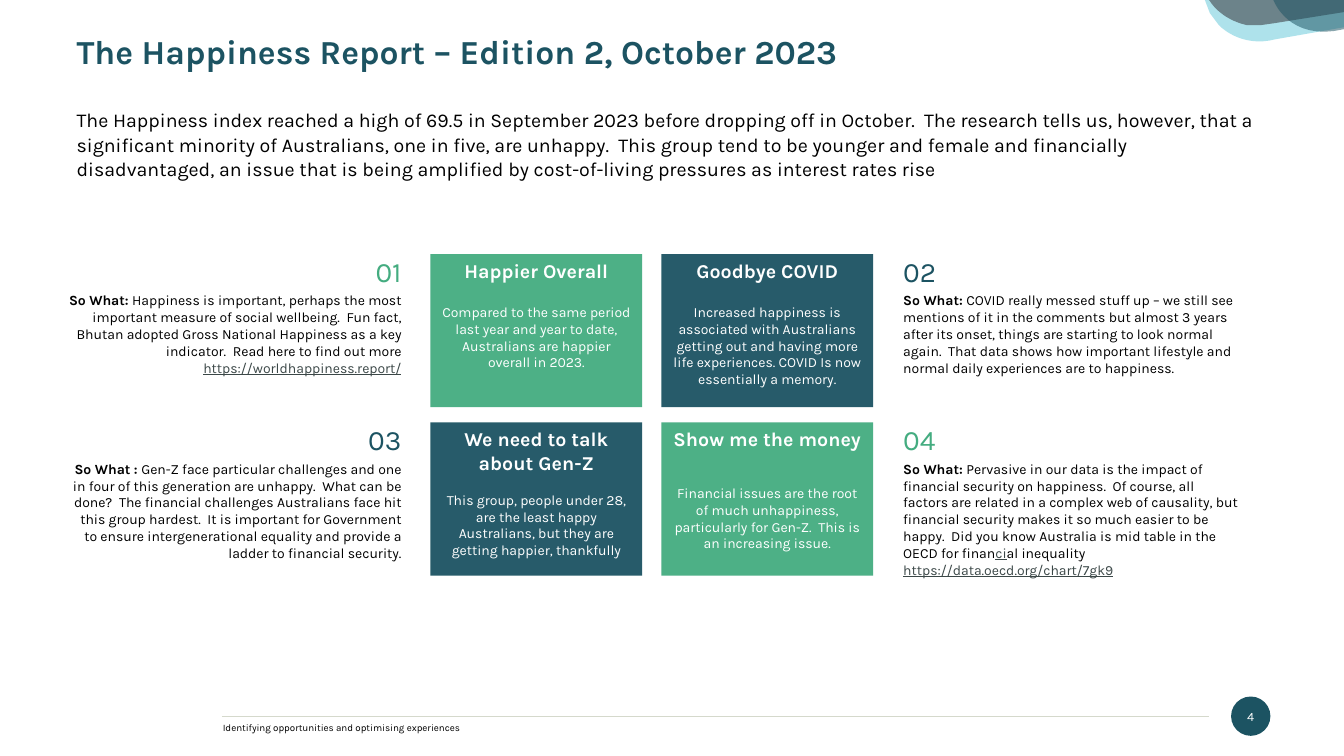
from dataclasses import dataclass

from lxml import etree
from pptx import Presentation
from pptx.dml.color import RGBColor
from pptx.enum import shapes, text
from pptx.oxml import ns
from pptx.util import Inches, Pt

FONT = "Karla"
TEAL = RGBColor(0x1C, 0x53, 0x62)
GREEN = RGBColor(0x44, 0xAC, 0x80)
AQUA = RGBColor(0x5E, 0xC7, 0xD9)
SLATE = RGBColor(0x6C, 0x83, 0x8A)
RULE = RGBColor(0xD5, 0xD9, 0xCC)
LINK = RGBColor(0x3B, 0x47, 0x47)
BLACK = RGBColor(0, 0, 0)
WHITE = RGBColor(0xFF, 0xFF, 0xFF)

LEFT, CENTER, RIGHT = text.PP_ALIGN.LEFT, text.PP_ALIGN.CENTER, text.PP_ALIGN.RIGHT
CARD_X, CARD_Y = (4.27, 6.56), (2.52, 4.19)
CARD_W, CARD_H = 2.1, 1.52
NOTE_X, NOTE_W = (0.56, 8.86), 3.52
CURVE_STEPS = 16

Point = tuple[float, float]


@dataclass(frozen=True)
class Phrase:
    wording: str
    linked: bool = False


@dataclass(frozen=True)
class Finding:
    number: str
    color: RGBColor
    heading: str
    summary: str
    gap: float
    lead: str
    phrases: tuple[Phrase, ...]


@dataclass(frozen=True)
class Wave:
    color: RGBColor
    opacity: int
    curve: tuple[Point, Point, Point, Point]
    edge: tuple[Point, ...]


WAVES = (
    Wave(AQUA, 50, ((12.09, 0.25), (12.09, 0.25), (12.3, 0.48), (12.65, 0.39)),
         ((13.33, 0.27), (13.33, 0), (11.95, 0), (12, 0.13))),
    Wave(SLATE, 100, ((12, 0.01), (12, 0.01), (12.1, 0.19), (12.37, 0.25)),
         ((12.5, 0.25), (12.64, 0.23), (13.33, 0.12), (13.33, 0), (11.99, 0))),
    Wave(TEAL, 52, ((12.63, 0), (12.63, 0), (12.78, 0.42), (13.33, 0.29)),
         ((13.33, 0),)),
)

FINDINGS = (
    Finding("01", GREEN, "Happier Overall",
            "Compared to the same period last year and year to date, Australians are "
            "happier overall in 2023.", 15, "So What: ",
            (Phrase("Happiness is important, perhaps the most important measure of social "
                    "wellbeing.  Fun fact, Bhutan adopted Gross National Happiness as a "
                    "key indicator.  Read here to find out more "),
             Phrase("https://worldhappiness.report/", True))),
    Finding("02", TEAL, "Goodbye COVID",
            "Increased happiness is associated with Australians getting out and having "
            "more life experiences. COVID Is now essentially a memory.", 15, "So What: ",
            (Phrase("COVID really messed stuff up – we still see mentions of it in the "
                    "comments but almost 3 years after its onset, things are starting to "
                    "look normal again.  That data shows how important lifestyle and "
                    "normal daily experiences are to happiness."),)),
    Finding("03", TEAL, "We need to talk about Gen-Z",
            "This group, people under 28, are the least happy Australians, but they are "
            "getting happier, thankfully", 12, "So What : ",
            (Phrase("Gen-Z face particular challenges and one in four of this generation "
                    "are unhappy.  What can be done?  The financial challenges "
                    "Australians face hit this group hardest.  It is important for "
                    "Government to ensure intergenerational equality and provide a "
                    "ladder to financial security."),)),
    Finding("04", GREEN, "Show me the money",
            "Financial issues are the root of much unhappiness, particularly for Gen-Z.  "
            "This is an increasing issue.", 24, "So What: ",
            (Phrase("Pervasive in our data is the impact of financial security on "
                    "happiness.  Of course, all factors are related in a complex web of "
                    "causality, but financial security makes it so much easier to be "
                    "happy.  Did you know Australia is mid table in the OECD for finan"),
             Phrase("ci", True), Phrase("al inequality "),
             Phrase("https://data.oecd.org/chart/7gk9", True))),
)


def paint(shape, color: RGBColor, opacity: int = 100) -> None:
    shape.shadow.inherit = False
    shape.line.fill.background()
    shape.fill.solid()
    shape.fill.fore_color.rgb = color
    if opacity < 100:
        tint = shape._element.spPr.find(".//" + ns.qn("a:srgbClr"))
        etree.SubElement(tint, ns.qn("a:alpha")).set("val", str(opacity * 1000))


def set_frame(shape, insets: tuple[float, float, float, float],
              anchor=text.MSO_ANCHOR.TOP):
    frame = shape.text_frame
    frame.word_wrap = True
    frame.auto_size = text.MSO_AUTO_SIZE.NONE
    frame.vertical_anchor = anchor
    (frame.margin_left, frame.margin_top,
     frame.margin_right, frame.margin_bottom) = map(Inches, insets)
    return frame


def style(paragraph, size: float, color: RGBColor, align=LEFT, bold: bool = False) -> None:
    paragraph.alignment = align
    font = paragraph.font
    font.name, font.size, font.bold = FONT, Pt(size), bold
    font.color.rgb = color


def add_box(slide, x: float, y: float, w: float, h: float):
    return slide.shapes.add_textbox(Inches(x), Inches(y), Inches(w), Inches(h))


def bezier(curve: tuple[Point, ...], t: float) -> Point:
    weights = ((1 - t) ** 3, 3 * t * (1 - t) ** 2, 3 * t * t * (1 - t), t ** 3)
    x, y = (sum(k * p[axis] for k, p in zip(weights, curve)) for axis in (0, 1))
    return x, y


def add_wave(slide, wave: Wave) -> None:
    outline = [bezier(wave.curve, i / CURVE_STEPS) for i in range(CURVE_STEPS + 1)]
    points = [(Inches(x), Inches(y)) for x, y in (*outline, *wave.edge)]
    builder = slide.shapes.build_freeform(*points[0], scale=1.0)
    builder.add_line_segments(points[1:], close=True)
    paint(builder.convert_to_shape(), wave.color, wave.opacity)


def add_card(slide, finding: Finding, x: float, y: float) -> None:
    card = slide.shapes.add_shape(shapes.MSO_SHAPE.RECTANGLE, Inches(x), Inches(y),
                                  Inches(CARD_W), Inches(CARD_H))
    paint(card, finding.color, 95)
    frame = set_frame(card, (0.1, 0.05, 0.1, 0.2))
    heading, summary = frame.paragraphs[0], frame.add_paragraph()
    heading.text, summary.text = finding.heading, finding.summary
    summary.space_before = Pt(finding.gap)
    style(heading, 14, WHITE, CENTER, True)
    style(summary, 10, WHITE, CENTER)


def add_note(slide, finding: Finding, x: float, y: float, align) -> None:
    frame = set_frame(add_box(slide, x, y, NOTE_W, CARD_H), (0.1, 0, 0.1, 0))
    number, detail = frame.paragraphs[0], frame.add_paragraph()
    number.text = finding.number
    number.space_after = Pt(3)
    style(number, 20, finding.color, align)
    style(detail, 10, BLACK, align)
    lead = detail.add_run()
    lead.text, lead.font.bold = finding.lead, True
    for phrase in finding.phrases:
        run = detail.add_run()
        run.text = phrase.wording
        if phrase.linked:
            run.font.underline = True
            run.font.color.rgb = LINK


def add_footer(slide) -> None:
    badge = slide.shapes.add_shape(shapes.MSO_SHAPE.OVAL, Inches(12.21), Inches(6.91),
                                   Inches(0.39), Inches(0.39))
    paint(badge, TEAL)
    page = set_frame(badge, (0, 0, 0, 0), text.MSO_ANCHOR.MIDDLE).paragraphs[0]
    page.text = "4"
    style(page, 9, WHITE, CENTER)
    rule = slide.shapes.add_connector(shapes.MSO_CONNECTOR.STRAIGHT, Inches(2.2),
                                      Inches(7.11), Inches(11.99), Inches(7.11))
    rule.line.color.rgb, rule.line.width = RULE, Pt(0.5)
    etree.SubElement(rule._element.spPr, ns.qn("a:effectLst"))
    tagline = set_frame(add_box(slide, 2.21, 7.11, 3.06, 0.2),
                        (0, 0.05, 0.1, 0.05)).paragraphs[0]
    tagline.text = "Identifying opportunities and optimising experiences"
    style(tagline, 7, BLACK)


def add_opening(slide) -> None:
    title = slide.shapes.title
    title.left, title.top, title.width, title.height = map(Inches, (0.76, 0.35, 11.81, 0.4))
    headline = set_frame(title, (0, 0, 0, 0)).paragraphs[0]
    headline.text = "The Happiness Report – Edition 2, October 2023"
    headline.line_spacing = 0.9
    style(headline, 24, TEAL, bold=True)
    intro = set_frame(add_box(slide, 0.76, 1.06, 11.81, 1.02), (0, 0, 0, 0)).paragraphs[0]
    intro.text = ("The Happiness index reached a high of 69.5 in September 2023 before "
                  "dropping off in October.  The research tells us, however, that a "
                  "significant minority of Australians, one in five, are unhappy.  This "
                  "group tend to be younger and female and financially disadvantaged, an "
                  "issue that is being amplified by cost-of-living pressures as interest "
                  "rates rise")
    intro.line_spacing = 1.05
    style(intro, 14, BLACK)


def main() -> None:
    deck = Presentation()
    deck.slide_width, deck.slide_height = Inches(13.33), Inches(7.5)
    slide = deck.slides.add_slide(deck.slide_layouts[5])
    add_footer(slide)
    for wave in WAVES:
        add_wave(slide, wave)
    add_opening(slide)
    for index, finding in enumerate(FINDINGS):
        row, column = divmod(index, 2)
        add_card(slide, finding, CARD_X[column], CARD_Y[row])
        add_note(slide, finding, NOTE_X[column], CARD_Y[row], (RIGHT, LEFT)[column])
    deck.save("out.pptx")


if __name__ == "__main__":
    main()
